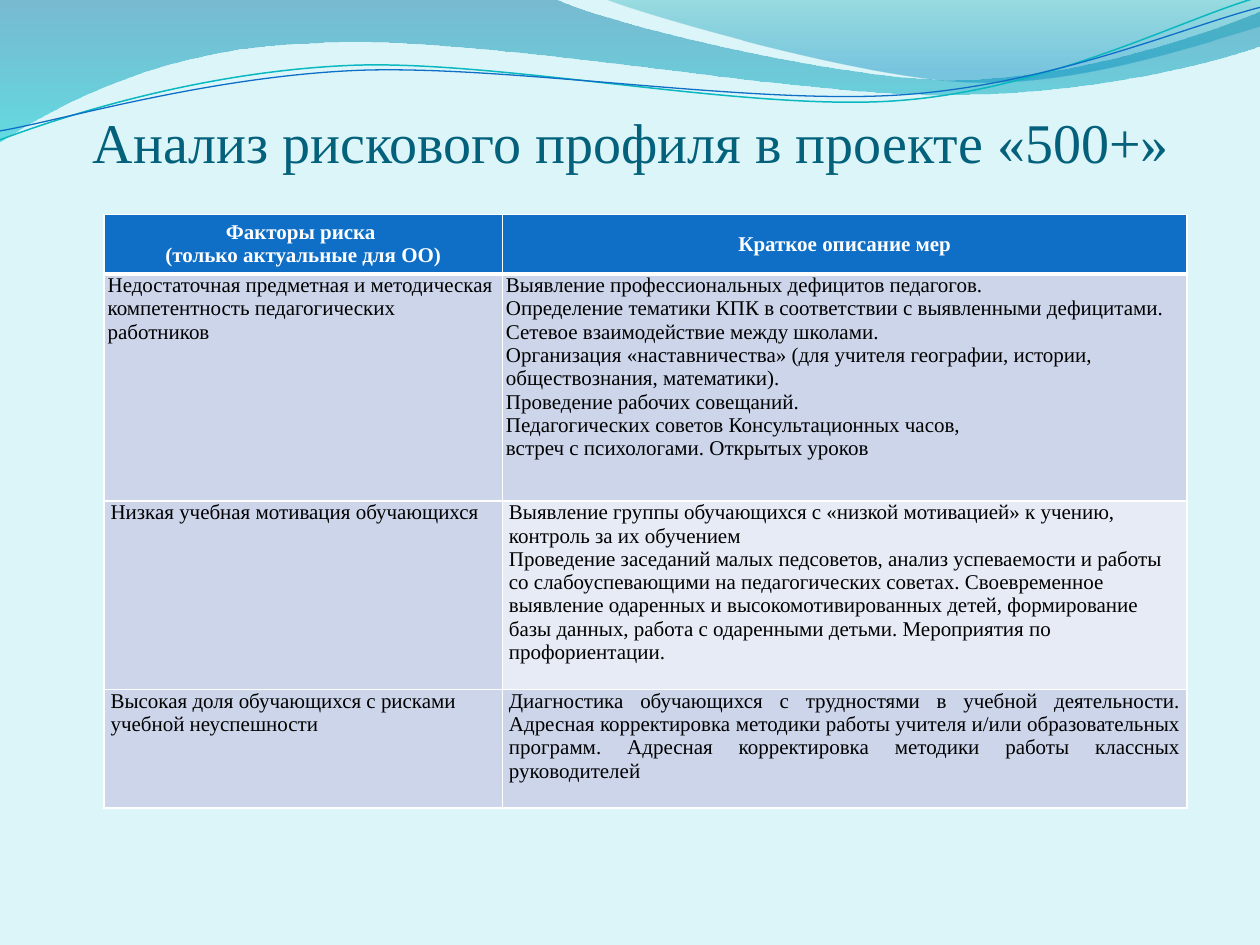
from dataclasses import dataclass
from typing import Any

from pptx import Presentation
from pptx.dml.color import RGBColor
from pptx.enum.text import MSO_ANCHOR as Anchor, PP_ALIGN as Align
from pptx.oxml import parse_xml
from pptx.oxml.ns import nsdecls
from pptx.util import Cm, Pt

COLORS = {
    "background": "DBF5F9", "title": "04617B", "header": "0F6FC6",
    "band": "CCD5EA", "light": "E7EBF5", "white": "FFFFFF", "black": "000000",
    "teal": "0AB8BF", "blue": "0F6FC6", "deep": "0074A1", "cyan": "00C6CF",
    "sea": "00A1A9", "azure": "008BBF",
}
FONT = "Times New Roman"
COLUMN_WIDTHS = (8.03, 13.8)
ROW_HEIGHTS = (1.2, 4.58, 3.8, 2.39)


@dataclass(frozen=True)
class Wave:
    """Outline in cm: one point is a straight step, three are a cubic curve."""
    start: tuple[float, float]
    segments: tuple[tuple[tuple[float, float], ...], ...]
    gradient: tuple[tuple[int, str, int], ...] = ()
    line: str = ""
    width: float = 0


@dataclass(frozen=True)
class TableCell:
    """Text and look of one table cell."""
    lines: tuple[str, ...]
    fill: str = "band"
    inset: float = 0.13
    align: Any = Align.LEFT
    header: bool = False


WAVES = (
    Wave((0, 0), (
        ((11.18, -0.03),),
        ((12.09, 0.43), (16.87, 1.6), (19.25, 1.6)),
        ((21.67, 1.6), (24.33, 0.66), (25.4, 0.23)),
        ((25.43, 0.91),),
        ((24.97, 1.12), (22.1, 1.93), (18.95, 1.91)),
        ((15.8, 1.91), (9.7, 0.71), (6.53, 0.86)),
        ((3.28, 0.91), (1.17, 2.11), (-0.03, 2.87)),
    ), gradient=((0, "deep", 45), (100, "cyan", 55))),
    Wave((12.17, -0.03), (
        ((12.93, 0.28), (17.32, 1.57), (19.53, 1.65)),
        ((21.74, 1.75), (24.41, 0.81), (25.4, 0.53)),
        ((25.4, 0),),
    ), gradient=((0, "sea", 30), (80, "azure", 45))),
    Wave((0, 2.82), (
        ((1.22, 2.36), (4.01, 1.45), (7.04, 1.32)),
        ((10.03, 1.19), (15.06, 2.26), (18.11, 2.03)),
        ((21.16, 1.8), (23.83, 0.38), (25.35, -0.05)),
    ), line="teal", width=0.85),
    Wave((0, 2.64), (
        ((1.19, 2.44), (4.17, 1.55), (7.19, 1.42)),
        ((10.24, 1.3), (15.16, 2.13), (18.21, 1.91)),
        ((21.23, 1.7), (23.9, 0.53), (25.4, 0.15)),
    ), line="blue", width=0.75),
)

HEADER = {"fill": "header", "inset": 0.07, "align": Align.CENTER, "header": True}
ROWS = (
    (TableCell(("Факторы риска ", "(только актуальные для ОО)"), **HEADER),
     TableCell(("Краткое описание мер",), **HEADER)),
    (TableCell(("Недостаточная предметная и методическая компетентность "
                "педагогических работников",), inset=0.07),
     TableCell((
         "Выявление профессиональных дефицитов педагогов.",
         "Определение тематики КПК в соответствии с выявленными дефицитами.",
         "Сетевое взаимодействие между школами.",
         "Организация «наставничества» (для учителя географии, истории, "
         "обществознания, математики).",
         "Проведение рабочих совещаний.",
         "Педагогических советов Консультационных часов,",
         "встреч с психологами. Открытых уроков"), inset=0.07)),
    (TableCell(("Низкая учебная мотивация обучающихся",)),
     TableCell((
         "Выявление группы обучающихся с «низкой мотивацией» к учению, "
         "контроль за их обучением",
         "Проведение заседаний малых педсоветов, анализ успеваемости и работы "
         "со слабоуспевающими на педагогических советах. Своевременное "
         "выявление одаренных и высокомотивированных детей, формирование базы "
         "данных, работа с одаренными детьми. Мероприятия по "
         "профориентации."), fill="light")),
    (TableCell(("Высокая доля обучающихся с рисками учебной неуспешности",)),
     TableCell((
         "Диагностика обучающихся с трудностями в учебной деятельности. "
         "Адресная корректировка методики работы учителя и/или образовательных "
         "программ. Адресная корректировка методики работы классных "
         "руководителей",), align=Align.JUSTIFY)),
)


def rgb(name: str) -> RGBColor:
    """Look up a named colour."""
    return RGBColor.from_string(COLORS[name])


def apply_format(target: Any, values: dict[str, Any]) -> None:
    """Set each named attribute on the target."""
    for name, value in values.items():
        setattr(target, name, value)


def write_lines(frame: Any, lines: tuple[str, ...], align: Any, color: str,
                font: dict[str, Any]) -> None:
    """Write one paragraph for each line."""
    for index, line in enumerate(lines):
        paragraph = frame.add_paragraph() if index else frame.paragraphs[0]
        paragraph.alignment = align
        run = paragraph.add_run()
        run.text = line
        apply_format(run.font, {"name": FONT, **font})
        run.font.color.rgb = rgb(color)


def bend(geometry: Any, wave: Wave) -> None:
    """Join each three steps of a cubic segment into one curve."""
    steps = iter(geometry.findall(".//{*}lnTo"))
    for segment in wave.segments:
        nodes = [next(steps) for _ in segment]
        if len(nodes) == 3:
            curve = parse_xml(f'<a:cubicBezTo {nsdecls("a")}/>')
            nodes[0].addprevious(curve)
            for node in nodes:
                curve.append(node[0])
                node.getparent().remove(node)


def draw_wave(slide: Any, wave: Wave) -> None:
    """Draw a gradient band or a thin curve."""
    builder = slide.shapes.build_freeform(Cm(wave.start[0]), Cm(wave.start[1]))
    points = [(Cm(x), Cm(y)) for segment in wave.segments for x, y in segment]
    builder.add_line_segments(points, close=bool(wave.gradient))
    shape = builder.convert_to_shape()
    shape.shadow.inherit = False
    geometry = shape.element.spPr.find("{*}custGeom")
    bend(geometry, wave)
    if wave.gradient:
        stops = "".join(
            f'<a:gs pos="{position * 1000}"><a:srgbClr val="{COLORS[color]}">'
            f'<a:alpha val="{alpha * 1000}"/></a:srgbClr></a:gs>'
            for position, color, alpha in wave.gradient)
        geometry.addnext(parse_xml(
            f'<a:gradFill {nsdecls("a")} rotWithShape="1"><a:gsLst>{stops}</a:gsLst>'
            '<a:lin ang="5400000" scaled="1"/></a:gradFill>'))
        shape.line.fill.background()
    else:
        shape.fill.background()
        shape.line.color.rgb = rgb(wave.line)
        shape.line.width = Pt(wave.width)


def draw_title(slide: Any, text: str) -> None:
    """Draw the slide title."""
    frame = slide.shapes.add_textbox(Cm(1.3), Cm(2.74), Cm(22.86), Cm(0.79)).text_frame
    apply_format(frame, {"word_wrap": True, "vertical_anchor": Anchor.BOTTOM,
                         "margin_left": 0, "margin_right": 0,
                         "margin_top": Cm(0.13), "margin_bottom": 0})
    write_lines(frame, (text,), Align.CENTER, "title", {"size": Pt(32)})


def fill_cell(cell: Any, content: TableCell) -> None:
    """Fill, border and write one table cell."""
    apply_format(cell, {
        "margin_left": Cm(content.inset), "margin_right": Cm(content.inset),
        "margin_top": 0, "margin_bottom": 0,
        "vertical_anchor": Anchor.MIDDLE if content.header else Anchor.TOP})
    properties = cell._tc.get_or_add_tcPr()
    for side in "LRTB":
        width = Pt(3 if content.header and side == "B" else 1)
        properties.append(parse_xml(
            f'<a:ln{side} {nsdecls("a")} w="{width}"><a:solidFill>'
            f'<a:srgbClr val="{COLORS["white"]}"/></a:solidFill></a:ln{side}>'))
    cell.fill.solid()
    cell.fill.fore_color.rgb = rgb(content.fill)
    write_lines(cell.text_frame, content.lines, content.align,
                "white" if content.header else "black",
                {"size": Pt(12), "bold": content.header})


def draw_table(slide: Any) -> None:
    """Draw the table of risk factors and measures."""
    table = slide.shapes.add_table(
        len(ROW_HEIGHTS), len(COLUMN_WIDTHS), Cm(2.1), Cm(4.32),
        Cm(sum(COLUMN_WIDTHS)), Cm(sum(ROW_HEIGHTS))).table
    for column, width in zip(table.columns, COLUMN_WIDTHS):
        column.width = Cm(width)
    for row, height, contents in zip(table.rows, ROW_HEIGHTS, ROWS):
        row.height = Cm(height)
        for cell, content in zip(row.cells, contents):
            fill_cell(cell, content)


def main() -> None:
    """Build and save the presentation."""
    presentation = Presentation()
    apply_format(presentation, {"slide_width": Cm(25.4), "slide_height": Cm(19.05)})
    slide = presentation.slides.add_slide(presentation.slide_layouts[6])
    slide.background.fill.solid()
    slide.background.fill.fore_color.rgb = rgb("background")
    for wave in WAVES:
        draw_wave(slide, wave)
    draw_title(slide, "Анализ рискового профиля в проекте «500+»")
    draw_table(slide)
    presentation.save("out.pptx")


if __name__ == "__main__":
    main()
